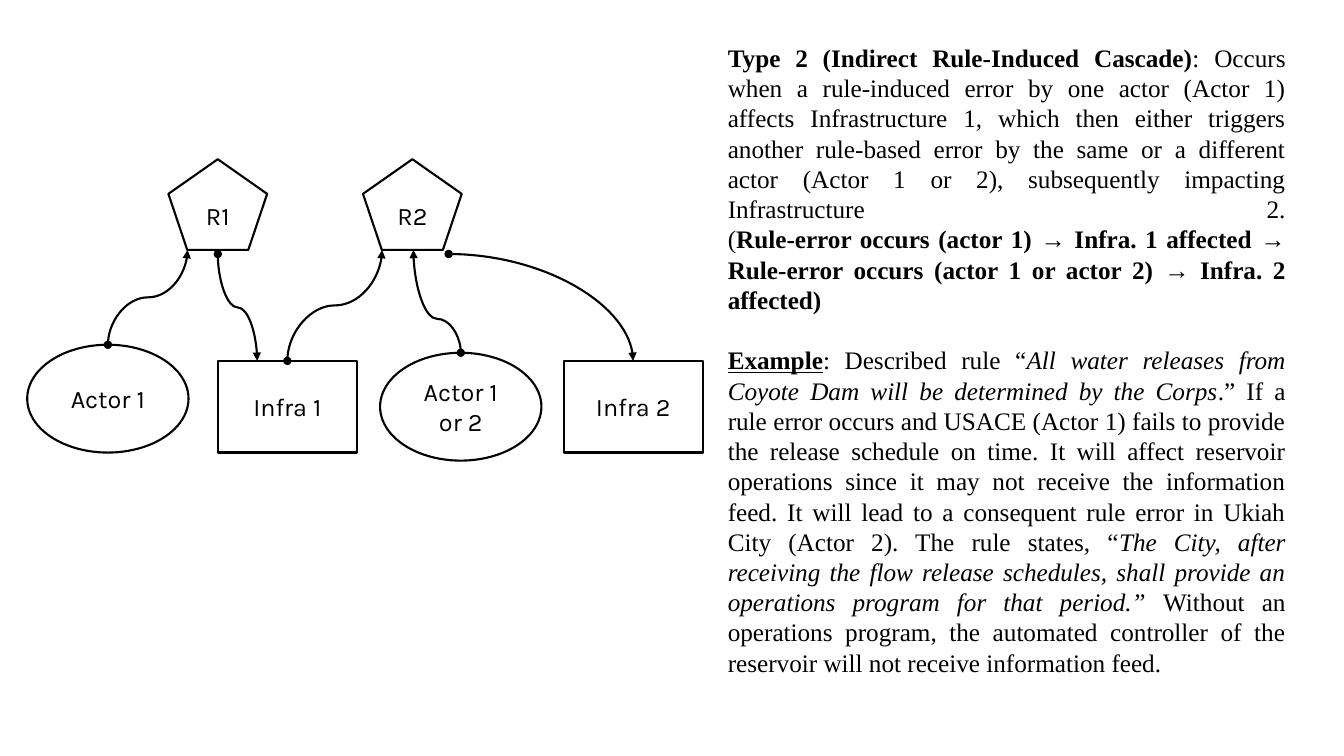
from dataclasses import dataclass

from lxml import etree
from pptx import Presentation
from pptx.dml.color import RGBColor
from pptx.enum.shapes import MSO_CONNECTOR as Route, MSO_SHAPE as Form
from pptx.enum.text import MSO_ANCHOR, MSO_AUTO_SIZE, PP_ALIGN
from pptx.oxml.ns import qn
from pptx.util import Inches, Pt


@dataclass(frozen=True)
class Theme:
    ink: RGBColor = RGBColor(0, 0, 0)
    paper: RGBColor = RGBColor(255, 255, 255)
    label_font: str = "Karla"
    body_font: str = "Times New Roman"
    size: Pt = Pt(18)
    stroke: Pt = Pt(1.5)
    paragraph_gap: Pt = Pt(21.6)


THEME = Theme()
BOLD, ITALIC = {"bold": True}, {"italic": True}
HEADING = {"bold": True, "underline": True}

RULE, ACTOR, INFRA = Form.REGULAR_PENTAGON, Form.OVAL, Form.RECTANGLE
NODE_SIZES = {RULE: (0.98, 0.9), ACTOR: (1.6, 1.07), INFRA: (1.38, 0.91)}
NODES = [
    (RULE, "R1", 1.67, 1.58),
    (RULE, "R2", 3.6, 1.58),
    (ACTOR, "Actor 1", 0.27, 3.42),
    (ACTOR, "Actor 1 or 2", 3.77, 3.5),
    (INFRA, "Infra 1", 2.16, 3.58),
    (INFRA, "Infra 2", 5.59, 3.58),
]

# Start, end and share of the height at which the curve turns
S_CURVES = [
    ((1.07, 3.42), (1.86, 2.48), 0.5),
    ((2.16, 2.52), (2.55, 3.58), 0.5),
    ((2.85, 3.58), (3.79, 2.48), 0.5),
    ((4.57, 3.5), (4.1, 2.48), 0.33),
]
R2_TO_INFRA_2 = ((4.45, 2.52), (6.28, 3.58))

LINE_BREAK = "\n"
DEFINITION = [
    ("Type 2 (Indirect Rule-Induced Cascade)", BOLD),
    (": Occurs when a rule-induced error by one actor (Actor 1) affects "
     "Infrastructure 1, which then either triggers another rule-based error "
     "by the same or a different actor (Actor 1 or 2), subsequently impacting "
     "Infrastructure 2.", {}),
    (LINE_BREAK, {}),
    ("(", {}),
    ("Rule-error occurs (actor 1) ", BOLD),
    ("→", {}),
    (" Infra. 1 affected ", BOLD),
    ("→", {}),
    (" Rule-error occurs (actor 1 or actor 2) ", BOLD),
    ("→", {}),
    (" Infra. 2 affected)", BOLD),
]
EXAMPLE = [
    ("Example", HEADING),
    (": Described rule “", {}),
    ("All water releases from Coyote Dam will be determined by the Corps", ITALIC),
    (".” If a rule error occurs and USACE (Actor 1) fails to provide the "
     "release schedule on time. It will affect reservoir operations since it "
     "may not receive the information feed. It will lead to a consequent rule "
     "error in Ukiah City (Actor 2). The rule states, “", {}),
    ("The City, after receiving the flow release schedules, shall provide an "
     "operations program for that period.” ", ITALIC),
    ("Without an operations program, the automated controller of the "
     "reservoir will not receive information feed.", {}),
]


def style_font(font, name, **formats):
    font.color.rgb = THEME.ink
    for attribute, value in {"name": name, "size": THEME.size, **formats}.items():
        setattr(font, attribute, value)


def style_line(line):
    line.color.rgb = THEME.ink
    line.width = THEME.stroke


def add_node(slide, form, label, left, top):
    width, height = NODE_SIZES[form]
    node = slide.shapes.add_shape(
        form, Inches(left), Inches(top), Inches(width), Inches(height))
    node.shadow.inherit = False
    node.fill.solid()
    node.fill.fore_color.rgb = THEME.paper
    style_line(node.line)
    frame = node.text_frame
    frame.word_wrap = True
    frame.vertical_anchor = MSO_ANCHOR.MIDDLE
    paragraph = frame.paragraphs[0]
    paragraph.alignment = PP_ALIGN.CENTER
    run = paragraph.add_run()
    run.text = label
    style_font(run.font, THEME.label_font)


def add_curve(slide, start, end):
    """Add a curved connector with a dot at its start and an arrow at its end."""
    curve = slide.shapes.add_connector(
        Route.CURVE, *(Inches(value) for value in (*start, *end)))
    style_line(curve.line)
    properties = curve._element.spPr
    outline = properties.find(qn("a:ln"))
    for side, kind in (("a:headEnd", "oval"), ("a:tailEnd", "triangle")):
        etree.SubElement(outline, qn(side), type=kind)
    etree.SubElement(properties, qn("a:effectLst"))
    return properties


def add_s_curve(slide, start, end, turn):
    """Add a curve that leaves and arrives vertically, by a quarter turn."""
    (x1, y1), (x2, y2) = start, end
    middle_x, middle_y = (x1 + x2) / 2, (y1 + y2) / 2
    half_x, half_y = (y1 - y2) / 2, (x2 - x1) / 2
    properties = add_curve(slide, (middle_x - half_x, middle_y - half_y),
                           (middle_x + half_x, middle_y + half_y))
    properties.find(qn("a:xfrm")).set("rot", str(270 * 60000))
    adjustments = properties.find(qn("a:prstGeom")).find(qn("a:avLst"))
    etree.SubElement(adjustments, qn("a:gd"), name="adj1",
                     fmla=f"val {round(turn * 100000)}")


def add_quarter_curve(slide, start, end):
    """Add a curve that leaves horizontally and arrives vertically."""
    properties = add_curve(slide, start, end)
    properties.find(qn("a:prstGeom")).set("prst", "curvedConnector2")


def fill_paragraph(paragraph, pieces):
    paragraph.alignment = PP_ALIGN.JUSTIFY
    for text, formats in pieces:
        if text == LINE_BREAK:
            paragraph.add_line_break()
            continue
        run = paragraph.add_run()
        run.text = text
        style_font(run.font, THEME.body_font, **formats)


def add_explanation(slide):
    box = slide.shapes.add_textbox(
        Inches(7.12), Inches(0.37), Inches(5.73), Inches(6.46))
    frame = box.text_frame
    frame.word_wrap = True
    frame.auto_size = MSO_AUTO_SIZE.SHAPE_TO_FIT_TEXT
    fill_paragraph(frame.paragraphs[0], DEFINITION)
    example = frame.add_paragraph()
    example.space_before = THEME.paragraph_gap
    fill_paragraph(example, EXAMPLE)


def main():
    deck = Presentation()
    deck.slide_width, deck.slide_height = Inches(13.33), Inches(7.5)
    slide = deck.slides.add_slide(deck.slide_layouts.get_by_name("Blank"))
    for node in NODES:
        add_node(slide, *node)
    for curve in S_CURVES:
        add_s_curve(slide, *curve)
    add_quarter_curve(slide, *R2_TO_INFRA_2)
    add_explanation(slide)
    deck.save("out.pptx")


if __name__ == "__main__":
    main()
